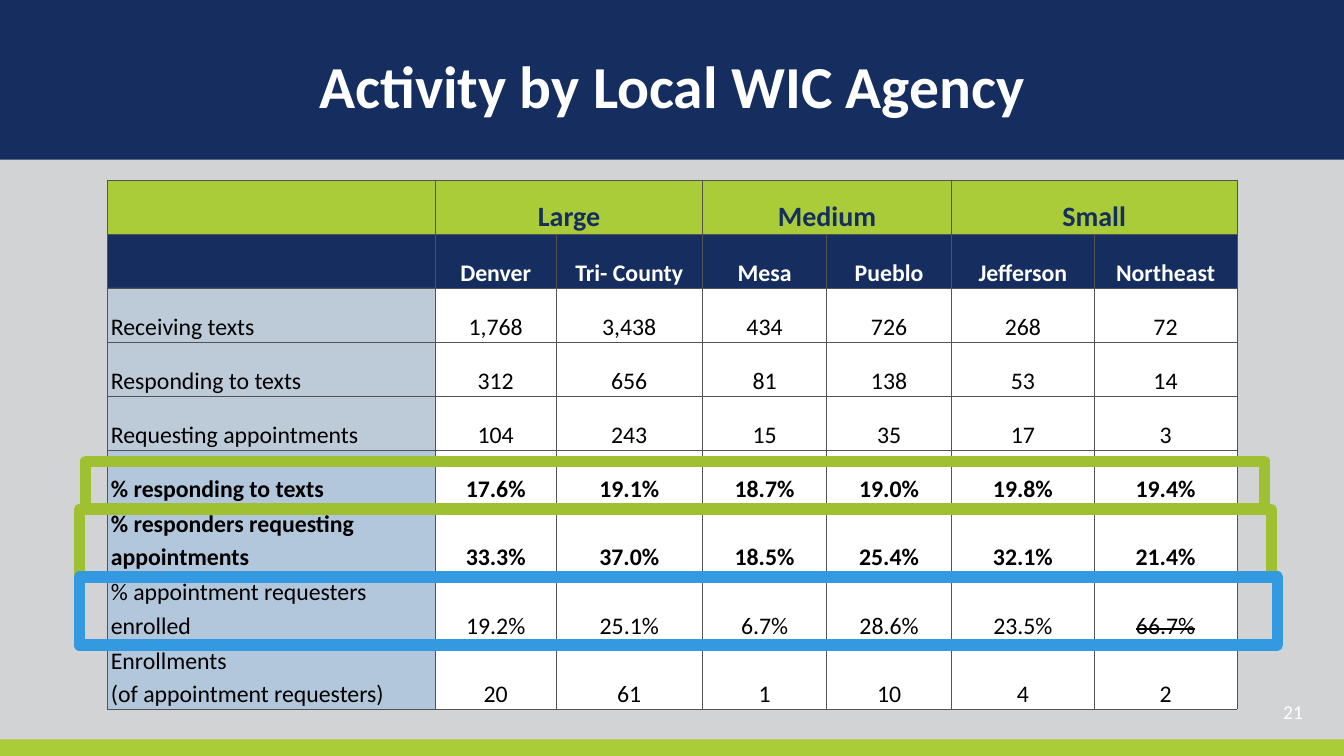
from dataclasses import dataclass

from lxml import etree
from pptx import Presentation
from pptx import util as u
from pptx.dml.color import RGBColor
from pptx.enum import shapes, text
from pptx.oxml import ns


@dataclass(frozen=True)
class Theme:
    font: str = "Calibri"
    navy: str = "152E5F"
    lime: str = "A9CC38"
    gray: str = "D1D3D4"
    white: str = "FFFFFF"
    black: str = "000000"
    label: str = "B2C7DC"
    label_pale: str = "B1C7DC"
    border: str = "535353"
    mark_green: str = "9FC131"
    mark_blue: str = "3399E1"
    title_size: int = 85
    group_size: int = 40
    body_size: int = 34
    number_size: int = 28
    mark_width: int = 16


THEME = Theme()
SLIDE_W, SLIDE_H = 67.74, 38.1
HEADER_H, FOOTER_H = 8.05, 0.84
TABLE_BOX = (5.41, 9.07, 56.93, 26.67)
COLUMN_WIDTHS = [16.54, 6.07, 7.39, 6.25, 6.3, 7.19, 7.19]
ROW_HEIGHTS = [2.72] * 6 + [3.45] * 3

SIZE_GROUPS = ["Large", "Medium", "Small"]
AGENCIES = ["Denver", "Tri- County", "Mesa", "Pueblo", "Jefferson", "Northeast"]
ACTIVITY = [
    ["Receiving texts", "1,768", "3,438", "434", "726", "268", "72"],
    ["Responding to texts", "312", "656", "81", "138", "53", "14"],
    ["Requesting appointments", "104", "243", "15", "35", "17", "3"],
    ["% responding to texts", "17.6%", "19.1%", "18.7%", "19.0%", "19.8%", "19.4%"],
    ["% responders requesting appointments",
     "33.3%", "37.0%", "18.5%", "25.4%", "32.1%", "21.4%"],
    ["% appointment requesters enrolled",
     "19.2%", "25.1%", "6.7%", "28.6%", "23.5%", "66.7%"],
    ["Enrollments\n(of appointment requesters)", "20", "61", "1", "10", "4", "2"],
]
COUNT_ROWS = range(2, 5)
BOLD_ROWS = range(0, 2), range(5, 7)
STRUCK_CELL = (7, 6)

# Highlight frames: offset from the table's corner, size, colour
MARKS = [
    (-1.09, 14.17, 59.41, 2.41, THEME.mark_green),
    (-1.42, 16.61, 60.1, 3.43, THEME.mark_green),
    (-1.42, 20.01, 60.4, 3.43, THEME.mark_blue),
]


def cm(*lengths):
    return [u.Cm(length) for length in lengths]


def apply(target, values):
    for name, value in values.items():
        setattr(target, name, value)


def paint(fill, color):
    fill.solid()
    fill.fore_color.rgb = RGBColor.from_string(color)


def write(frame, content, size, color, bold=False, align=text.PP_ALIGN.CENTER, spacing=None):
    frame.text = content
    for paragraph in frame.paragraphs:
        apply(paragraph, {"alignment": align, "line_spacing": spacing})
        for run in paragraph.runs:
            apply(run.font, {"name": THEME.font, "size": u.Pt(size), "bold": bold})
            run.font.color.rgb = RGBColor.from_string(color)


def add_rectangle(slide, box):
    rectangle = slide.shapes.add_shape(shapes.MSO_SHAPE.RECTANGLE, *cm(*box))
    rectangle.shadow.inherit = False
    return rectangle


def add_band(slide, box, color):
    band = add_rectangle(slide, box)
    paint(band.fill, color)
    band.line.fill.background()


def add_title(slide, box):
    title = slide.shapes.title
    left, top, width, height = cm(*box)
    apply(title, {"left": left, "top": top, "width": width, "height": height})
    apply(title.text_frame, {"word_wrap": True, "auto_size": text.MSO_AUTO_SIZE.NONE,
                             "vertical_anchor": text.MSO_ANCHOR.MIDDLE})
    write(title.text_frame, "Activity by Local WIC Agency",
          THEME.title_size, THEME.white, bold=True)
    # Bring the title in front of the header band
    slide.shapes._spTree.append(title._element)


def set_borders(cell):
    properties = cell._tc.get_or_add_tcPr()
    for index, side in enumerate(("lnL", "lnR", "lnT", "lnB")):
        line = etree.Element(ns.qn(f"a:{side}"), w=str(u.Pt(1)))
        fill = etree.SubElement(line, ns.qn("a:solidFill"))
        etree.SubElement(fill, ns.qn("a:srgbClr"), val=THEME.border)
        properties.insert(index, line)


def set_alpha(cell, percent):
    color = cell._tc.tcPr.find(f"{ns.qn('a:solidFill')}/{ns.qn('a:srgbClr')}")
    etree.SubElement(color, ns.qn("a:alpha"), val=str(percent * 1000))


def cell_fill(row, column):
    if row < 2:
        return (THEME.lime, THEME.navy)[row]
    if column:
        return THEME.white
    return THEME.label_pale if row in COUNT_ROWS else THEME.label


def add_activity_table(slide, box):
    groups = [""] + [part for group in SIZE_GROUPS for part in (group, "")]
    rows = [groups, [""] + AGENCIES] + ACTIVITY
    table = slide.shapes.add_table(len(rows), len(COLUMN_WIDTHS), *cm(*box)).table
    apply(table, {"first_row": False, "horz_banding": False})
    for column, width in zip(table.columns, COLUMN_WIDTHS):
        column.width = u.Cm(width)
    for row, height in zip(table.rows, ROW_HEIGHTS):
        row.height = u.Cm(height)

    for r, values in enumerate(rows):
        size = THEME.body_size if r else THEME.group_size
        color = (THEME.navy, THEME.white)[r] if r < 2 else THEME.black
        bold = any(r in span for span in BOLD_ROWS)
        for c, value in enumerate(values):
            cell = table.cell(r, c)
            apply(cell, {"vertical_anchor": text.MSO_ANCHOR.BOTTOM,
                         "margin_left": u.Cm(0.18), "margin_right": u.Cm(0.18),
                         "margin_top": 0, "margin_bottom": 0})
            align = text.PP_ALIGN.CENTER if c else text.PP_ALIGN.LEFT
            write(cell.text_frame, value, size, color, bold, align, 1.15)
            paint(cell.fill, cell_fill(r, c))
            set_borders(cell)
            if c == 0 and r in COUNT_ROWS:
                set_alpha(cell, 62)

    # Each agency size spans two agencies
    for c in range(1, len(COLUMN_WIDTHS), 2):
        table.cell(0, c).merge(table.cell(0, c + 1))
    struck = table.cell(*STRUCK_CELL).text_frame.paragraphs[0].runs[0]
    struck._r.get_or_add_rPr().set("strike", "sngStrike")


def add_marks(slide, box):
    for dx, dy, width, height, color in MARKS:
        mark = add_rectangle(slide, (box[0] + dx, box[1] + dy, width, height))
        mark.fill.background()
        paint(mark.line.fill, color)
        mark.line.width = u.Pt(THEME.mark_width)


def add_slide_number(slide, box):
    number = slide.shapes.add_textbox(*cm(*box)).text_frame
    apply(number, {"word_wrap": True, "margin_left": 0, "margin_right": 0})
    write(number, "21", THEME.number_size, THEME.white)


def main():
    prs = Presentation()
    prs.slide_width, prs.slide_height = cm(SLIDE_W, SLIDE_H)
    slide = prs.slides.add_slide(prs.slide_layouts[5])
    paint(slide.background.fill, THEME.gray)

    # Header and footer
    add_band(slide, (0, 0, SLIDE_W, HEADER_H), THEME.navy)
    add_band(slide, (0, SLIDE_H - FOOTER_H, SLIDE_W, FOOTER_H), THEME.lime)

    # Content
    add_activity_table(slide, TABLE_BOX)
    add_title(slide, (6.91, 2.31, 53.92, 3.89))
    add_marks(slide, TABLE_BOX)
    add_slide_number(slide, (64.39, 35.13, 1.57, 1.6))
    prs.save("out.pptx")


if __name__ == "__main__":
    main()
